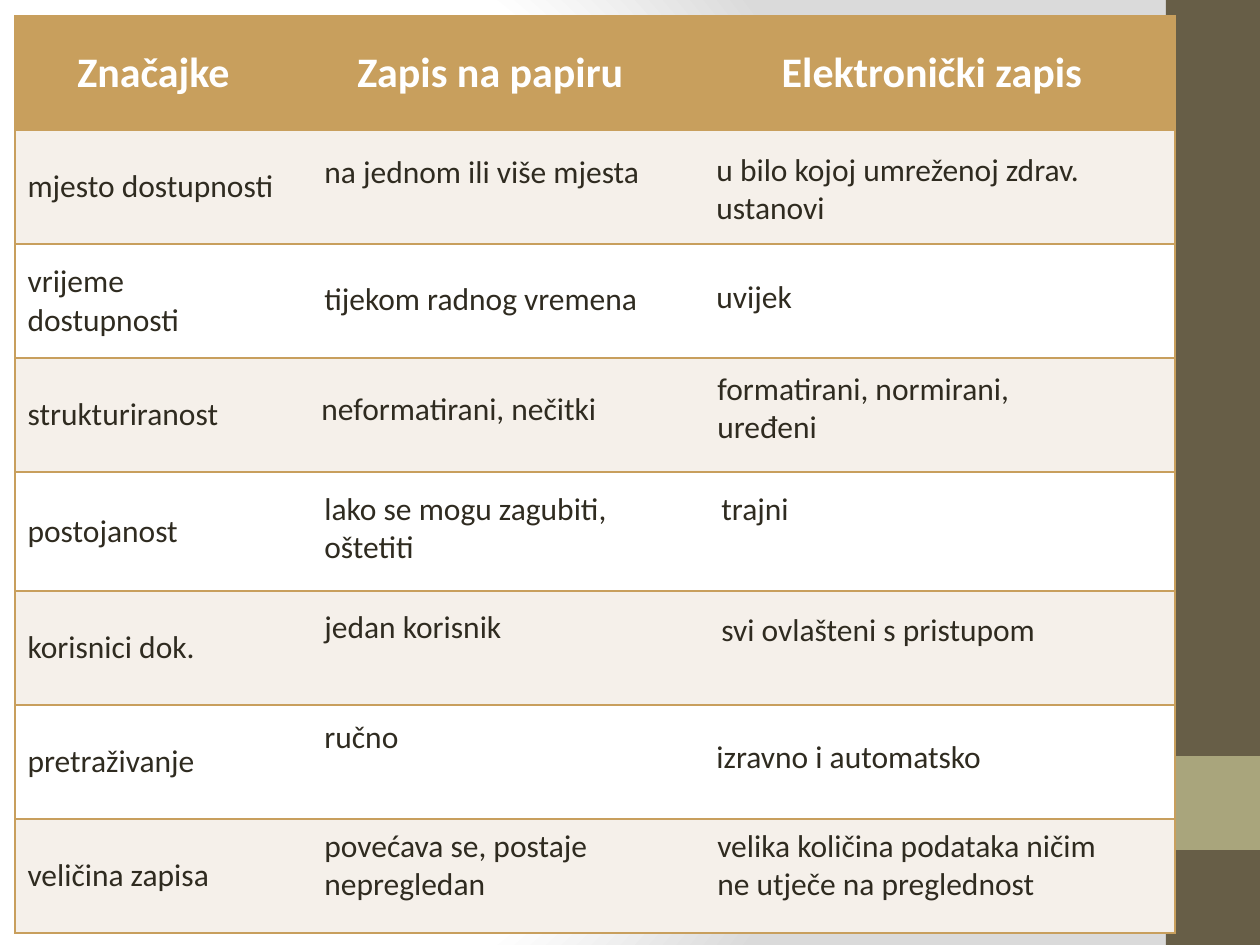
from lxml import etree
from pptx import Presentation
from pptx.dml.color import RGBColor
from pptx.enum.shapes import MSO_SHAPE
from pptx.enum.text import MSO_ANCHOR, MSO_AUTO_SIZE, PP_ALIGN
from pptx.oxml import parse_xml
from pptx.util import Pt

RECTANGLE = MSO_SHAPE.RECTANGLE
MIDDLE = MSO_ANCHOR.MIDDLE
GROW = MSO_AUTO_SIZE.SHAPE_TO_FIT_TEXT
CENTER, LEFT = PP_ALIGN.CENTER, PP_ALIGN.LEFT

SCALE = 914400 / 126
DRAWING = "http://schemas.openxmlformats.org/drawingml/2006/main"
COLORS = {
    "gold": "C89F5D", "cream": "F5F0EA", "white": "FFFFFF", "text": "2F2B20",
    "olive": "675E47", "sage": "A9A57C", "gray": "DADADA",
}
HEADER_FORMAT = {"name": "Calibri", "size": Pt(24), "bold": True}
BODY_FORMAT = {"name": "Calibri", "size": Pt(18), "bold": False}


def emu(*pixels):
    return [round(value * SCALE) for value in pixels]


def write(frame, text, text_format, color, align=LEFT):
    para = frame.paragraphs[0]
    para.alignment = align
    span = para.add_run()
    span.text = text
    for name, value in text_format.items():
        setattr(span.font, name, value)
    span.font.color.rgb = RGBColor.from_string(COLORS[color])


deck = Presentation()
deck.slide_width, deck.slide_height = emu(1260, 945)
page = deck.slides.add_slide(deck.slide_layouts[6])

# Background: radial gradient
stops = "".join(
    f'<a:gs pos="{position}000"><a:srgbClr val="{COLORS[color]}"/></a:gs>'
    for position, color in [(0, "white"), (75, "white"), (100, "gray")]
)
page.background.fill.solid()
background = page.background.fill._xPr
background.replace(background[0], parse_xml(
    f'<a:gradFill xmlns:a="{DRAWING}" rotWithShape="1"><a:gsLst>{stops}</a:gsLst>'
    '<a:path path="circle"><a:fillToRect l="20000" t="50000" r="100000" b="50000"/>'
    "</a:path></a:gradFill>"
))

# Side band with its accent square
for top, height, color in [(0, 945, "olive"), (756, 94, "sage")]:
    band = page.shapes.add_shape(RECTANGLE, *emu(1166, top, 94, height))
    band.shadow.inherit = False
    band.fill.solid()
    band.fill.fore_color.rgb = RGBColor.from_string(COLORS[color])
    band.line.fill.background()

# Table: header row and feature names
headers = ["Značajke", "Zapis na papiru", "Elektronički zapis"]
features = [
    "mjesto dostupnosti", "vrijeme dostupnosti", "strukturiranost", "postojanost",
    "korisnici dok.", "pretraživanje", "veličina zapisa",
]
column_widths = [277, 397, 486]
row_heights = [114, 114, 114, 114, 119, 114, 114, 114]
table = page.shapes.add_table(
    len(row_heights), len(column_widths),
    *emu(15, 16, sum(column_widths), sum(row_heights)),
).table
for column, width in zip(table.columns, emu(*column_widths)):
    column.width = width
for row, height in zip(table.rows, emu(*row_heights)):
    row.height = height

for row_index, row in enumerate(table.rows):
    for column_index, cell in enumerate(row.cells):
        cell.vertical_anchor = MIDDLE
        # Gold outline and row rules, no lines between columns
        borders = {"lnL": column_index == 0, "lnR": column_index == 2,
                   "lnT": True, "lnB": True}
        properties = cell._tc.get_or_add_tcPr()
        for tag, visible in borders.items():
            line = etree.SubElement(properties, f"{{{DRAWING}}}{tag}", w=str(Pt(1)))
            if visible:
                paint = etree.SubElement(line, f"{{{DRAWING}}}solidFill")
                etree.SubElement(paint, f"{{{DRAWING}}}srgbClr", val=COLORS["gold"])
            else:
                etree.SubElement(line, f"{{{DRAWING}}}noFill")
        fill = "gold" if row_index == 0 else ("white", "cream")[row_index % 2]
        cell.fill.solid()
        cell.fill.fore_color.rgb = RGBColor.from_string(COLORS[fill])
        if row_index == 0:
            write(cell.text_frame, headers[column_index], HEADER_FORMAT, "white", CENTER)
        elif column_index == 0:
            write(cell.text_frame, features[row_index - 1], BODY_FORMAT, "text")

# Text boxes over the two value columns: left, top, width, line count, text
values = [
    (312, 146, 397, 1, "na jednom ili više mjesta"),
    (704, 144, 397, 2, "u bilo kojoj umreženoj zdrav. ustanovi"),
    (312, 273, 397, 1, "tijekom radnog vremena"),
    (704, 271, 397, 1, "uvijek"),
    (309, 383, 397, 1, "neformatirani, nečitki"),
    (705, 363, 397, 2, "formatirani, normirani, uređeni"),
    (312, 483, 397, 2, "lako se mogu zagubiti, oštetiti"),
    (709, 483, 397, 1, "trajni"),
    (312, 601, 397, 1, "jedan korisnik"),
    (709, 604, 397, 1, "svi ovlašteni s pristupom"),
    (312, 711, 397, 1, "ručno"),
    (704, 731, 397, 1, "izravno i automatsko"),
    (312, 820, 397, 2, "povećava se, postaje nepregledan"),
    (705, 820, 440, 2, "velika količina podataka ničim ne utječe na preglednost"),
]
for left, top, width, lines, text in values:
    box = page.shapes.add_textbox(*emu(left, top, width, 51 + 38 * lines))
    box.text_frame.word_wrap = True
    box.text_frame.auto_size = GROW
    write(box.text_frame, text, BODY_FORMAT, "text")

deck.save("out.pptx")
